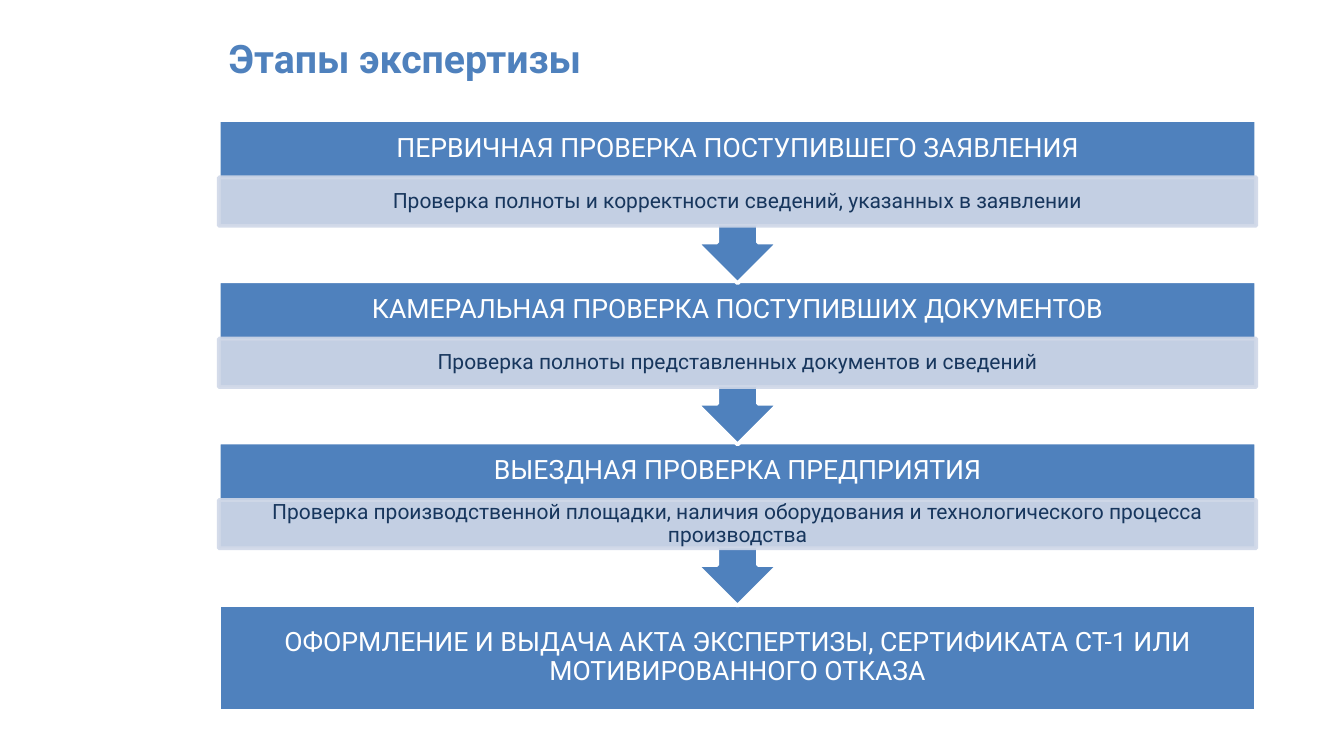
from lxml import etree
from pptx import Presentation
from pptx.dml.color import RGBColor
from pptx.enum.shapes import MSO_SHAPE
from pptx.enum.text import MSO_ANCHOR, PP_ALIGN
from pptx.oxml.ns import qn
from pptx.util import Pt

PX = 9144  # 100 px to the inch
RECT, CALLOUT = MSO_SHAPE.RECTANGLE, MSO_SHAPE.DOWN_ARROW_CALLOUT
MIDDLE = MSO_ANCHOR.MIDDLE
LEFT, CENTER = PP_ALIGN.LEFT, PP_ALIGN.CENTER

BLUE = RGBColor(0x4F, 0x81, 0xBD)
PALE = RGBColor(0xD0, 0xD8, 0xE8)
NAVY = RGBColor(0x17, 0x36, 0x5D)
WHITE = RGBColor(0xFF, 0xFF, 0xFF)

FONT = "Roboto"
HEAD_H, NOTE_H, STAGE_H = 57, 48, 162

STAGES = [
    ("ПЕРВИЧНАЯ ПРОВЕРКА ПОСТУПИВШЕГО ЗАЯВЛЕНИЯ",
     "Проверка полноты и корректности сведений, указанных в заявлении"),
    ("КАМЕРАЛЬНАЯ ПРОВЕРКА ПОСТУПИВШИХ ДОКУМЕНТОВ",
     "Проверка полноты представленных документов и сведений"),
    ("ВЫЕЗДНАЯ ПРОВЕРКА ПРЕДПРИЯТИЯ",
     "Проверка производственной площадки, наличия оборудования "
     "и технологического процесса производства"),
]
RESULT = ("ОФОРМЛЕНИЕ И ВЫДАЧА АКТА ЭКСПЕРТИЗЫ, СЕРТИФИКАТА СТ-1 "
          "ИЛИ МОТИВИРОВАННОГО ОТКАЗА")


def emu(*sizes):
    return [size * PX for size in sizes]


def write(shape, text, size, color, pads, align=CENTER, bold=False):
    """Set one paragraph; pads are left, top, right, bottom in px."""
    frame = shape.text_frame
    frame.word_wrap = True
    frame.vertical_anchor = MIDDLE
    (frame.margin_left, frame.margin_top,
     frame.margin_right, frame.margin_bottom) = emu(*pads)
    para = frame.paragraphs[0]
    para.text = text
    para.alignment = align
    para.line_spacing = 0.9
    font = para.runs[0].font
    font.name, font.size, font.bold = FONT, Pt(size), bold
    font.color.rgb = color


def add_box(slide, kind, box, fill, line):
    shape = slide.shapes.add_shape(kind, *emu(*box))
    shape.shadow.inherit = False
    shape.fill.solid()
    shape.fill.fore_color.rgb = fill
    shape.line.color.rgb = line
    shape.line.width = Pt(2.75)
    return shape


def fade(shape, percent):
    """Make the fill and the line partly see-through."""
    for color in shape.element.spPr.iter(qn("a:srgbClr")):
        alpha = etree.SubElement(color, qn("a:alpha"))
        alpha.set("val", str(percent * 1000))


def add_title(slide, box):
    title = slide.shapes.add_textbox(*emu(*box))
    write(title, "Этапы экспертизы", 28, BLUE, (10, 5, 10, 5), LEFT, True)


def add_stage(slide, box, head, note):
    left, top, width, height = box
    callout = add_box(slide, CALLOUT, box, BLUE, WHITE)
    write(callout, head, 19, WHITE, (15, 15, 15, 15 + NOTE_H))
    band = add_box(slide, RECT, (left, top + HEAD_H, width, NOTE_H),
                   PALE, PALE)
    fade(band, 90)
    write(band, note, 15, NAVY, (12, 2, 12, 2))


def add_flow(slide, box):
    """Stack the stages from the bottom up, so each arrow tip lies on top."""
    left, top, width, height = box
    last_h = HEAD_H + NOTE_H
    drop = height - last_h
    last = add_box(slide, RECT, (left, top + drop, width, last_h),
                   BLUE, WHITE)
    write(last, RESULT, 19, WHITE, (15, 15, 15, 15))
    count = len(STAGES)
    for i in reversed(range(count)):
        place = (left, top + drop * i // count, width, STAGE_H)
        add_stage(slide, place, *STAGES[i])


def main():
    deck = Presentation()
    deck.slide_width, deck.slide_height = emu(1333, 750)
    slide = deck.slides.add_slide(deck.slide_layouts[6])
    add_title(slide, (217, 30, 900, 61))
    add_flow(slide, (217, 119, 1029, 586))
    deck.save("out.pptx")


if __name__ == "__main__":
    main()
